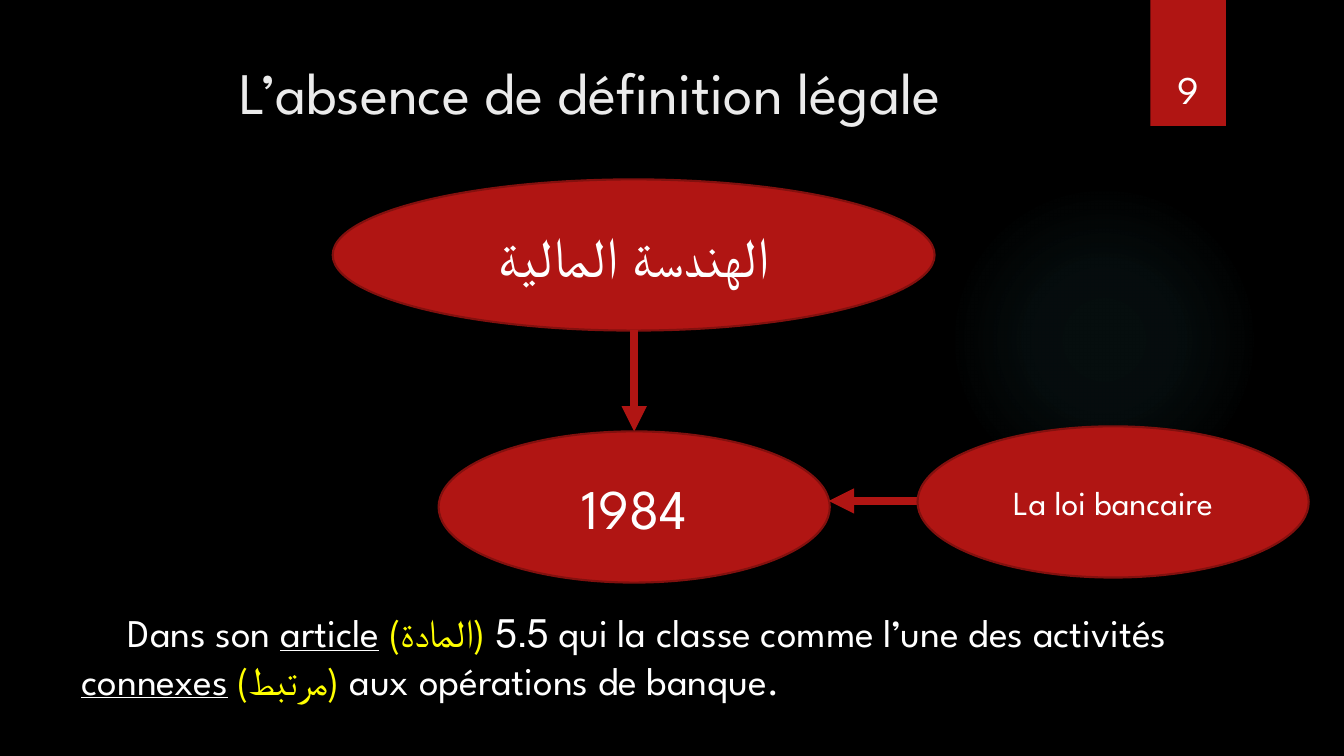
from pptx import Presentation
from pptx.dml.color import RGBColor
from pptx.enum.shapes import MSO_CONNECTOR, MSO_SHAPE
from pptx.enum.text import MSO_ANCHOR, PP_ALIGN
from pptx.oxml import parse_xml
from pptx.oxml.ns import nsdecls, qn
from pptx.oxml.xmlchemy import OxmlElement
from pptx.util import Inches, Pt

OVAL, RECTANGLE = MSO_SHAPE.OVAL, MSO_SHAPE.RECTANGLE
STRAIGHT = MSO_CONNECTOR.STRAIGHT
TOP, MIDDLE, BOTTOM = MSO_ANCHOR.TOP, MSO_ANCHOR.MIDDLE, MSO_ANCHOR.BOTTOM
LEFT, CENTER = PP_ALIGN.LEFT, PP_ALIGN.CENTER


def color(value):
    return RGBColor.from_string(value)


class SlideBuilder:
    FONT = "League Spartan"
    BLACK, WHITE, TITLE = "000000", "FFFFFF", "EBEBEB"
    RED, DARK_RED, YELLOW = "B01513", "82100E", "FFFF00"
    GLOW = "50B9C1"

    def __init__(self, presentation):
        self.slide = presentation.slides.add_slide(presentation.slide_layouts[6])
        background = self.slide.background.fill
        background.solid()
        background.fore_color.rgb = color(self.BLACK)

    def add_shape(self, kind, box):
        shape = self.slide.shapes.add_shape(kind, *map(Inches, box))
        shape.shadow.inherit = False
        shape.fill.solid()
        shape.fill.fore_color.rgb = color(self.RED)
        shape.line.fill.background()
        return shape

    def add_glow(self, box):
        """Add a circle that fades out from its centre."""
        shape = self.add_shape(OVAL, box)
        stops = "".join(
            f'<a:gs pos="{position * 1000}"><a:srgbClr val="{self.GLOW}">'
            f'<a:alpha val="{opacity * 1000}"/></a:srgbClr></a:gs>'
            for position, opacity in ((0, 7), (36, 6), (69, 0))
        )
        gradient = parse_xml(
            f'<a:gradFill {nsdecls("a")}><a:gsLst>{stops}</a:gsLst>'
            '<a:path path="circle"><a:fillToRect l="50000" t="50000" '
            'r="50000" b="50000"/></a:path></a:gradFill>'
        )
        properties = shape._element.spPr
        properties.replace(properties.find(qn("a:solidFill")), gradient)

    def fill_frame(self, frame, runs, size, align=CENTER, anchor=TOP):
        """Fill a text frame with (text, colour, underlined) runs."""
        frame.word_wrap = True
        frame.vertical_anchor = anchor
        paragraph = frame.paragraphs[0]
        paragraph.alignment = align
        for text, text_color, underlined in runs:
            run = paragraph.add_run()
            run.text = text
            run.font.name = self.FONT
            run.font.size = Pt(size)
            run.font.color.rgb = color(text_color)
            run.font.underline = underlined
        return paragraph

    def add_text(self, box, runs, size, align=CENTER, anchor=TOP):
        text_box = self.slide.shapes.add_textbox(*map(Inches, box))
        return self.fill_frame(text_box.text_frame, runs, size, align, anchor)

    def add_bubble(self, box, text, size):
        shape = self.add_shape(OVAL, box)
        shape.line.color.rgb = color(self.DARK_RED)
        shape.line.width = Pt(1.5)
        self.fill_frame(shape.text_frame, [(text, self.WHITE, False)], size, anchor=MIDDLE)

    def add_arrow(self, start, end):
        arrow = self.slide.shapes.add_connector(STRAIGHT, *map(Inches, start + end))
        arrow.line.color.rgb = color(self.RED)
        arrow.line.width = Pt(6)
        head = OxmlElement("a:tailEnd")
        head.set("type", "triangle")
        properties = arrow._element.spPr
        properties.find(qn("a:ln")).append(head)
        properties.append(OxmlElement("a:effectLst"))


def main():
    presentation = Presentation()
    presentation.slide_width = Inches(13.33)
    presentation.slide_height = Inches(7.5)
    builder = SlideBuilder(presentation)
    white, yellow = builder.WHITE, builder.YELLOW

    builder.add_glow((9.41, 1.83, 3.08, 3.08))
    builder.add_shape(RECTANGLE, (11.41, 0, 0.75, 1.25))
    builder.add_text((0.71, 0.5, 10.29, 1.53),
                     [("L’absence de définition légale", builder.TITLE, False)], 42)
    builder.add_text((11.32, 0.32, 0.92, 0.84), [("9", white, False)], 28, anchor=BOTTOM)

    builder.add_bubble((3.3, 1.78, 5.97, 1.5), "الهندسة المالية", 40)
    builder.add_arrow((6.29, 3.27), (6.29, 4.28))
    builder.add_bubble((4.35, 4.28, 3.88, 1.5), "1984", 40)
    builder.add_arrow((9.1, 4.97), (8.22, 4.97))
    builder.add_bubble((9.1, 4.23, 3.88, 1.5), "La loi bancaire", 24)

    explanation = builder.add_text((0.71, 5.99, 11.91, 1.07), [
        ("Dans son ", white, False),
        ("article", white, True),
        (" ", white, False),
        ("(المادة) ", yellow, False),
        ("5.5 qui la classe comme l’une des activités ", white, False),
        ("connexes", white, True),
        (" ", white, False),
        ("(مرتبط) ", yellow, False),
        ("aux opérations de banque.", white, False),
    ], 28, LEFT)
    explanation._p.get_or_add_pPr().set("indent", str(Inches(0.46)))

    presentation.save("out.pptx")


if __name__ == "__main__":
    main()
